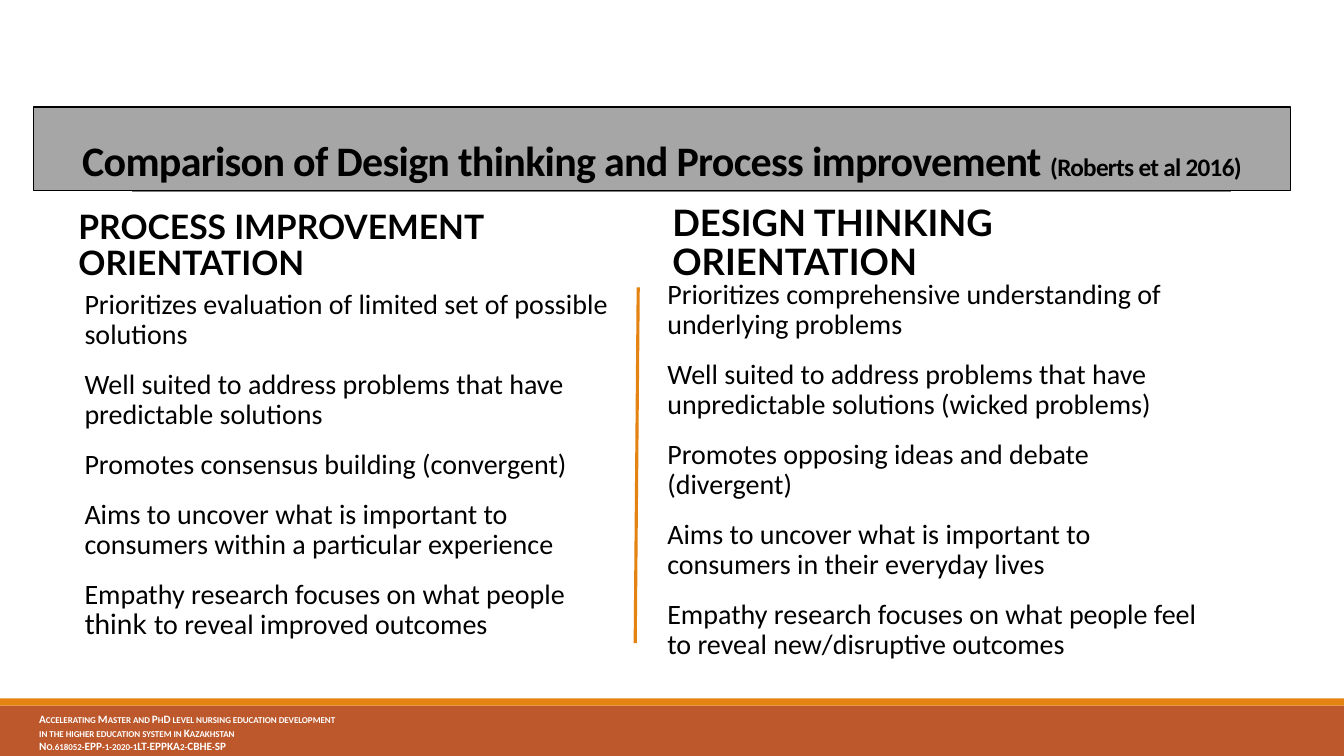
import pptx
import pptx.dml.color
import pptx.enum.shapes
import pptx.enum.text
import pptx.oxml
import pptx.util

Inches = pptx.util.Inches
Pt = pptx.util.Pt
ANCHOR = pptx.enum.text.MSO_ANCHOR

BLACK, WHITE, ORANGE = "000000", "FFFFFF", "E48312"


def rgb(value):
    return pptx.dml.color.RGBColor.from_string(value)


def add_run(paragraph, text, size, font, color=BLACK, bold=False):
    run = paragraph.add_run()
    run.text = text
    run.font.size = Pt(size)
    run.font.name = font
    run.font.bold = bold
    run.font.color.rgb = rgb(color)
    return run


presentation = pptx.Presentation()
presentation.slide_width = Inches(13.33)
presentation.slide_height = Inches(7.5)
slide = presentation.slides.add_slide(presentation.slide_layouts[5])

# Footer bands
for top, height, color in [(7, 0.5, "BD582C"), (6.93, 0.07, ORANGE)]:
    band = slide.shapes.add_shape(
        pptx.enum.shapes.MSO_SHAPE.RECTANGLE,
        0, Inches(top), presentation.slide_width, Inches(height))
    band.shadow.inherit = False
    band.fill.solid()
    band.fill.fore_color.rgb = rgb(color)
    band.line.fill.background()

# Title rule and column divider
for x1, y1, x2, y2, color, width in [
    (1.31, 1.9, 12.21, 1.9, "808080", 0.5),
    (6.33, 2.85, 6.3, 6.38, ORANGE, 2.25),
]:
    line = slide.shapes.add_connector(
        pptx.enum.shapes.MSO_CONNECTOR.STRAIGHT,
        Inches(x1), Inches(y1), Inches(x2), Inches(y2))
    line.line.color.rgb = rgb(color)
    line.line.width = Pt(width)
    line.element.spPr.append(pptx.oxml.parse_xml(
        '<a:effectLst xmlns:a="http://schemas.openxmlformats.org/drawingml/2006/main"/>'))

# Project footer
footer = slide.shapes.add_textbox(Inches(0.29), Inches(7.02), Inches(4.59), Inches(0.47))
footer.text_frame.word_wrap = True
for index, text in enumerate([
    "Accelerating Master and PhD level nursing education development",
    "in the higher education system in Kazakhstan",
    "No.618052-EPP-1-2020-1LT-EPPKA2-CBHE-SP",
]):
    paragraph = footer.text_frame.paragraphs[0] if index == 0 else footer.text_frame.add_paragraph()
    run = add_run(paragraph, text, 8, "Calibri", WHITE, bold=True)
    run.font._element.set("cap", "small")

# Title, stacked above its rule
title = slide.shapes.title
title.element.getparent().append(title.element)
title.left, title.top = Inches(0.33), Inches(1.06)
title.width, title.height = Inches(12.47), Inches(0.83)
title.fill.solid()
title.fill.fore_color.rgb = rgb("A6A6A6")
title.line.color.rgb = rgb(BLACK)
title.line.width = Pt(1)
title.text_frame.word_wrap = True
title.text_frame.auto_size = pptx.enum.text.MSO_AUTO_SIZE.NONE
title.text_frame.vertical_anchor = ANCHOR.BOTTOM
paragraph = title.text_frame.paragraphs[0]
paragraph.alignment = pptx.enum.text.PP_ALIGN.CENTER
paragraph.line_spacing = 0.85
for text, size in [
    ("Comparison of Design thinking and Process improvement ", 30),
    ("(Roberts et al 2016)", 18),
]:
    run = add_run(paragraph, text, size, "Calibri", bold=True)
    run.font._element.set("spc", "-50")

# Compared columns: heading, its size and place, then points and their place
columns = [
    ("PROCESS IMPROVEMENT ORIENTATION", 24, 0.68, 2.04, 0.74, 2.83, 5.37, [
        ["Prioritizes evaluation of limited set of possible solutions"],
        ["Well suited to address problems that have predictable solutions"],
        ["Promotes consensus building (convergent)"],
        ["Aims to uncover what is important to consumers within a particular experience"],
        ["Empathy research focuses on what people ", "think ", "to reveal improved outcomes"],
    ]),
    ("DESIGN THINKING ORIENTATION", 26, 6.57, 2.02, 6.52, 2.73, 5.51, [
        ["Prioritizes comprehensive understanding of underlying problems"],
        ["Well suited to address problems that have unpredictable solutions (wicked problems)"],
        ["Promotes opposing ideas and debate (divergent)"],
        ["Aims to uncover what is important to consumers in their everyday lives"],
        ["Empathy research focuses on what people feel to reveal new/disruptive outcomes"],
    ]),
]
for heading, size, heading_left, heading_top, left, top, width, points in columns:
    heading_box = slide.shapes.add_textbox(
        Inches(heading_left), Inches(heading_top), Inches(5.8), Inches(0.81))
    heading_box.text_frame.word_wrap = True
    heading_box.text_frame.vertical_anchor = ANCHOR.MIDDLE
    paragraph = heading_box.text_frame.paragraphs[0]
    paragraph.line_spacing = 0.9
    add_run(paragraph, heading, size, "Lato", bold=True)

    body = slide.shapes.add_textbox(Inches(left), Inches(top), Inches(width), Inches(3.65))
    frame = body.text_frame
    frame.word_wrap = True
    frame.margin_left, frame.margin_right = Inches(0.1), 0
    for index, parts in enumerate(points):
        paragraph = frame.paragraphs[0] if index == 0 else frame.add_paragraph()
        paragraph.line_spacing = 0.9
        paragraph.space_before = Pt(12 if index else 0)
        paragraph.space_after = Pt(2)
        for text in parts:
            add_run(paragraph, text, 20, "Lato" if text == "think " else "Calibri")

presentation.save("out.pptx")
